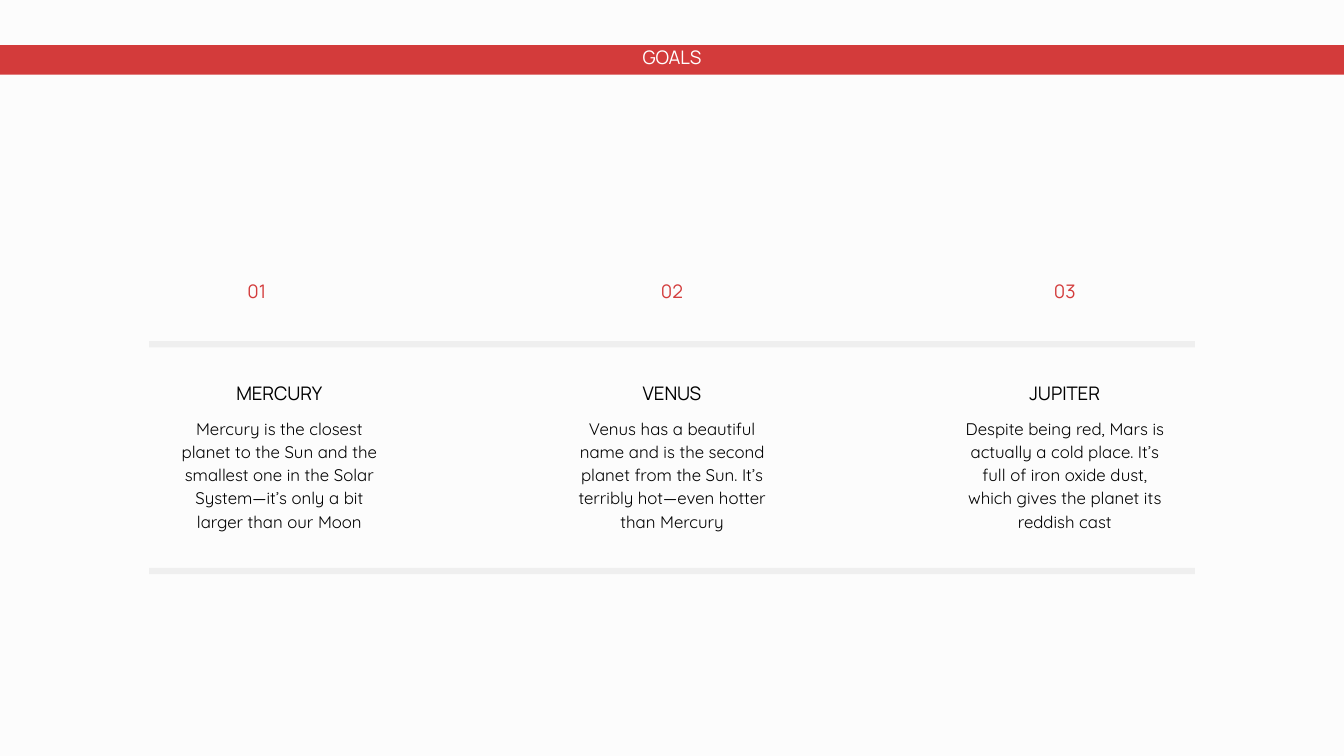
from dataclasses import dataclass

from pptx import Presentation
from pptx.dml.color import RGBColor as RGB
from pptx.enum.shapes import MSO_SHAPE as Shape
from pptx.enum.text import MSO_ANCHOR as Anchor, PP_ALIGN as Align
from pptx.util import Pt


@dataclass(frozen=True)
class Theme:
    """Colours, fonts and type sizes of the slide."""
    paper: str = "FCFCFC"
    accent: str = "D33B3B"
    rule: str = "EFEFEF"
    ink: str = "000000"
    white: str = "FFFFFF"
    head_font: str = "Manrope"
    body_font: str = "Quicksand"
    head_size: float = 10
    body_size: float = 9


THEME = Theme()
CENTRE_X, COLUMN_PITCH = 360, 210.4
GOALS = [
    ("01", "MERCURY", "Mercury is the closest planet to the Sun and the smallest one "
     "in the Solar System—it’s only a bit larger than our Moon", 48.2, Align.LEFT),
    ("02", "VENUS", "Venus has a beautiful name and is the second planet from the Sun. "
     "It’s terribly hot—even hotter than Mercury", 48.2, Align.CENTER),
    ("03", "JUPITER", "Despite being red, Mars is actually a cold place. It’s full of iron "
     "oxide dust, which gives the planet its reddish cast", 56.8, Align.CENTER),
]


def add_bar(s, left, top, width, height, color):
    """Add a plain filled rectangle."""
    sp = s.shapes.add_shape(Shape.RECTANGLE, Pt(left), Pt(top), Pt(width), Pt(height))
    sp.shadow.inherit = False
    sp.fill.solid()
    sp.fill.fore_color.rgb = RGB.from_string(color)
    sp.line.fill.background()


def add_text(s, text, centre, top, width, height, *, color=THEME.ink, font=THEME.head_font,
             size=THEME.head_size, align=Align.CENTER, anchor=Anchor.TOP,
             spacing=None, after=None):
    """Add a text box centred on a given x position."""
    sp = s.shapes.add_textbox(Pt(centre - width / 2), Pt(top), Pt(width), Pt(height))
    tf = sp.text_frame
    tf.word_wrap = True
    tf.vertical_anchor = anchor
    tf.margin_left = tf.margin_top = tf.margin_right = tf.margin_bottom = Pt(7.2)
    p = tf.paragraphs[0]
    p.alignment = align
    if spacing is not None:
        p.line_spacing = spacing
    if after is not None:
        p.space_after = Pt(after)
    r = p.add_run()
    r.text = text
    r.font.name, r.font.size = font, Pt(size)
    r.font.color.rgb = RGB.from_string(color)


def add_goal(s, centre, number, name, description, number_width, number_align):
    """Add one column with its number, name and description."""
    add_text(s, name, centre, 198.7, 129.6, 35.3)
    add_text(s, description, centre, 215.3, 121, 62.6, font=THEME.body_font,
             size=THEME.body_size, spacing=1.15, after=16)
    add_text(s, number, centre, 146.2, number_width, 19.4, color=THEME.accent,
             align=number_align, anchor=Anchor.MIDDLE)


def main():
    """Build and save the slide."""
    prs = Presentation()
    prs.slide_width, prs.slide_height = Pt(720), Pt(405)
    s = prs.slides.add_slide(prs.slide_layouts[6])
    s.background.fill.solid()
    s.background.fill.fore_color.rgb = RGB.from_string(THEME.paper)
    add_bar(s, 0, 24.2, 720, 15.8, THEME.accent)
    add_text(s, "GOALS", CENTRE_X, 18.7, 671, 26, color=THEME.white)
    for i, goal in enumerate(GOALS):
        add_goal(s, CENTRE_X + (i - 1) * COLUMN_PITCH, *goal)
    for top in (182.8, 304.3):
        add_bar(s, 79.9, top, 560.2, 3.3, THEME.rule)
    prs.save("out.pptx")


if __name__ == "__main__":
    main()
